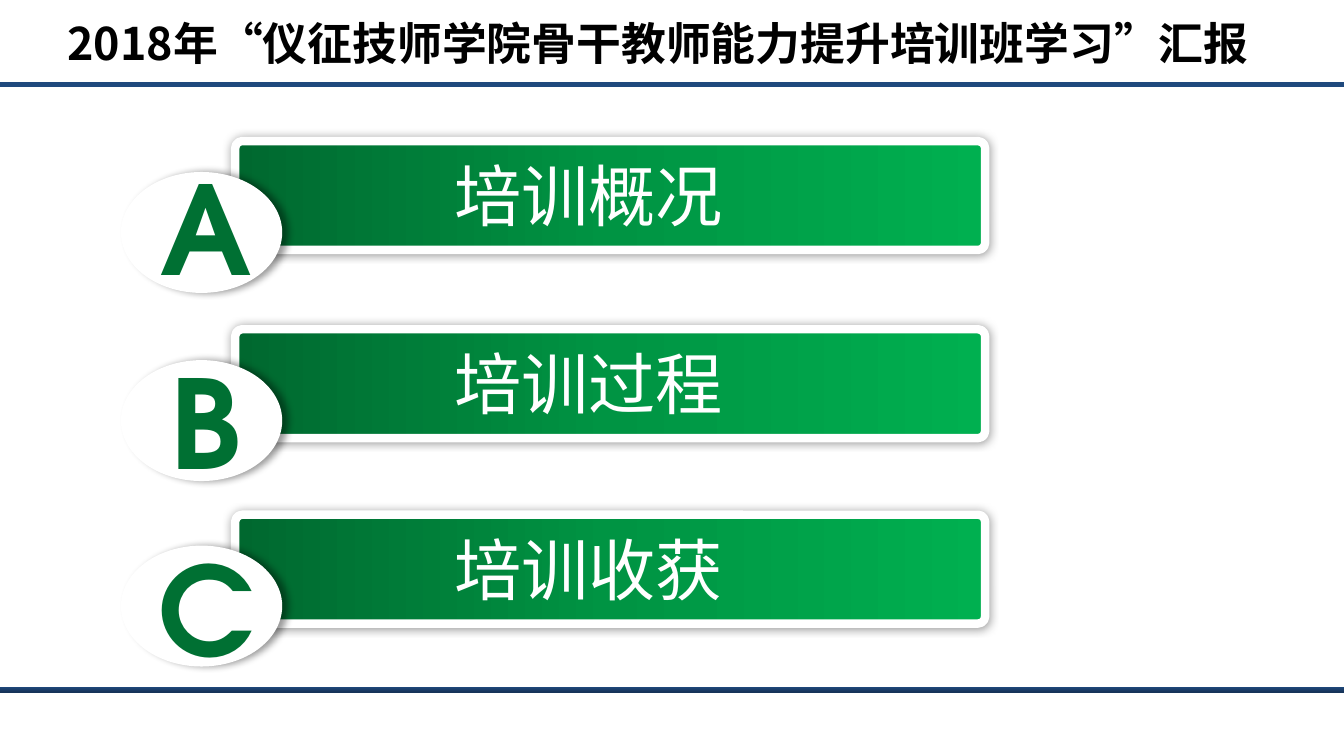
from copy import deepcopy

from lxml.etree import SubElement
from pptx import Presentation
from pptx.dml.color import RGBColor
from pptx.enum.shapes import MSO_CONNECTOR, MSO_SHAPE
from pptx.enum.text import MSO_ANCHOR, MSO_AUTO_SIZE, PP_ALIGN
from pptx.oxml.ns import qn
from pptx.util import Pt

CJK = "Noto Sans CJK SC"
LATIN = "TeX Gyre Adventor"
NAVY = "1F497D"
GREENS = [(0, "00682F"), (0.5, "009443"), (1, "00B050")]

# letter, topic, top of the bar, top of the letter
TOPICS = [
    ("A", "培训概况", 75.6, 93.6),
    ("B", "培训过程", 176.4, 197.28),
    ("C", "培训收获", 275.76, 297.36),
]


def rgb(value):
    return RGBColor.from_string(value)


class SlideBuilder:
    def __init__(self, slide, font=CJK):
        self.slide = slide
        self.font = font

    def line(self, x1, y1, x2, y2, color, width):
        rule = self.slide.shapes.add_connector(
            MSO_CONNECTOR.STRAIGHT, Pt(x1), Pt(y1), Pt(x2), Pt(y2))
        rule.line.color.rgb = rgb(color)
        rule.line.width = Pt(width)
        SubElement(rule._element.spPr, qn("a:effectLst"))

    def shape(self, kind, left, top, width, height, fill=None):
        shape = self.slide.shapes.add_shape(
            kind, Pt(left), Pt(top), Pt(width), Pt(height))
        shape.shadow.inherit = False
        shape.line.fill.background()
        if fill:
            shape.fill.solid()
            shape.fill.fore_color.rgb = rgb(fill)
        return shape

    def gradient(self, shape, stops, angle):
        """Fill with (position, colour) stops; the angle runs anticlockwise."""
        shape.fill.gradient()
        shape.fill.gradient_angle = angle
        stop_list = shape._element.spPr.find(".//" + qn("a:gsLst"))
        while len(stop_list) < len(stops):
            stop_list.append(deepcopy(stop_list[0]))
        for stop, (position, color) in zip(shape.fill.gradient_stops, stops):
            stop.position = position
            stop.color.rgb = rgb(color)

    def shadow(self, shape, blur, distance):
        effects = shape._element.spPr.find(qn("a:effectLst"))
        outer = SubElement(effects, qn("a:outerShdw"), blurRad=str(Pt(blur)),
                           dist=str(Pt(distance)), dir="0", algn="ctr", rotWithShape="0")
        color = SubElement(outer, qn("a:srgbClr"), val="000000")
        SubElement(color, qn("a:alpha"), val="40000")

    def text(self, text, left, top, width, height, *, size, color, font=None, bold=False,
             align=PP_ALIGN.LEFT, anchor=MSO_ANCHOR.TOP, spacing=0.8, grow=True):
        frame = self.slide.shapes.add_textbox(
            Pt(left), Pt(top), Pt(width), Pt(height)).text_frame
        frame.word_wrap = True
        frame.auto_size = MSO_AUTO_SIZE.SHAPE_TO_FIT_TEXT if grow else MSO_AUTO_SIZE.NONE
        frame.vertical_anchor = anchor
        paragraph = frame.paragraphs[0]
        paragraph.alignment = align
        paragraph.line_spacing = spacing
        run = paragraph.add_run()
        run.text = text
        run.font.size = Pt(size)
        run.font.bold = bold
        run.font.color.rgb = rgb(color)
        run.font.name = font or self.font
        SubElement(run._r.rPr, qn("a:ea"), typeface=font or self.font)
        return frame

    def topic(self, letter, label, bar_top, letter_top):
        bar = self.shape(MSO_SHAPE.ROUNDED_RECTANGLE, 126, bar_top, 401.76, 58.32)
        bar.adjustments[0] = 0.064
        self.gradient(bar, GREENS, 0)
        bar.line.color.rgb = rgb("FFFFFF")
        bar.line.width = Pt(4.5)
        self.shadow(bar, 5, 0)
        badge = self.shape(MSO_SHAPE.OVAL, 64.8, bar_top + 16.56, 86.4, 64.8, "FFFFFF")
        self.shadow(badge, 4, 3)
        self.text(letter, 77.04, letter_top, 66.96, 71.28, size=66, color="007033",
                  font=LATIN, bold=True, align=PP_ALIGN.CENTER)
        self.text(label, 236.16, bar_top + 11.52, 207.36, 42.48, size=36,
                  color="FFFFFF", anchor=MSO_ANCHOR.MIDDLE)


def main():
    deck = Presentation()
    deck.slide_width, deck.slide_height = Pt(720), Pt(405)
    builder = SlideBuilder(deck.slides.add_slide(deck.slide_layouts[6]))

    builder.line(0, 45.36, 720, 45.36, NAVY, 3)
    footer = builder.shape(MSO_SHAPE.RECTANGLE, 0, 367.92, 720, 2.88)
    builder.gradient(footer, [(0, NAVY), (1, "163459")], 270)

    title = builder.text("2018年“仪征技师学院骨干教师能力提升培训班学习”汇报",
                         18.72, 7.2, 665.28, 33.84, size=24, color="000000", bold=True,
                         anchor=MSO_ANCHOR.MIDDLE, spacing=0.95, grow=False)
    title.margin_left, title.margin_right = Pt(17.5), Pt(0)

    for topic in TOPICS:
        builder.topic(*topic)
    deck.save("out.pptx")


if __name__ == "__main__":
    main()
